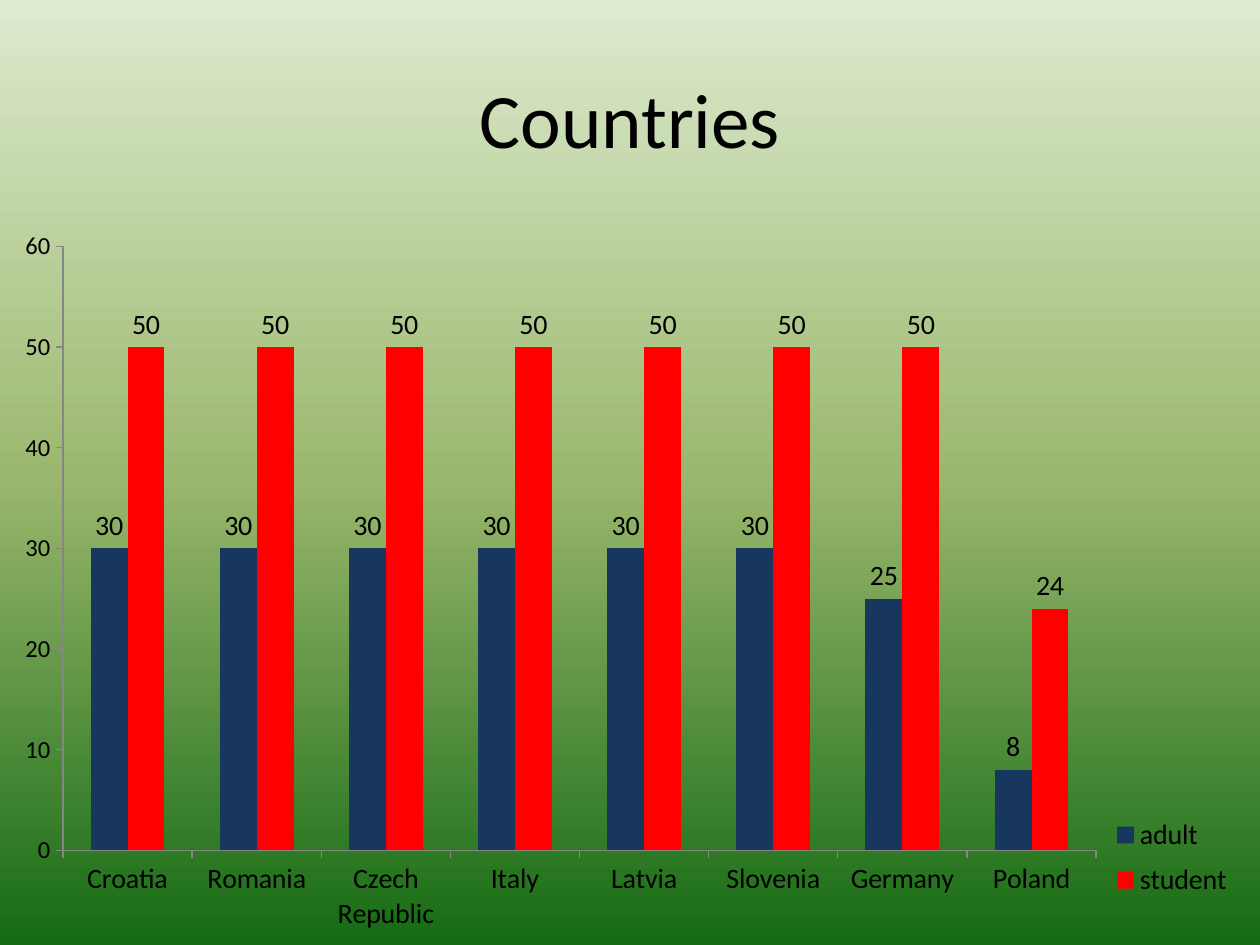
from copy import deepcopy
from typing import NamedTuple

from pptx import Presentation
from pptx.chart.data import CategoryChartData
from pptx.dml.color import RGBColor
from pptx.enum.chart import XL_CHART_TYPE, XL_LABEL_POSITION, XL_LEGEND_POSITION, XL_TICK_MARK
from pptx.enum.text import MSO_ANCHOR, PP_ALIGN
from pptx.oxml import parse_xml
from pptx.oxml.ns import nsdecls
from pptx.util import Inches, Pt

COLUMN = XL_CHART_TYPE.COLUMN_CLUSTERED
OUTER = XL_LABEL_POSITION.OUTSIDE_END
RIGHT = XL_LEGEND_POSITION.RIGHT
TICK = XL_TICK_MARK.OUTSIDE
MIDDLE = MSO_ANCHOR.MIDDLE
CENTER = PP_ALIGN.CENTER

BLACK = RGBColor(0, 0, 0)
GRAY = RGBColor(0x86, 0x86, 0x86)
NAVY = RGBColor(0x17, 0x37, 0x5E)
RED = RGBColor(0xFF, 0, 0)
PALE = RGBColor(0xDD, 0xEB, 0xCF)
OLIVE = RGBColor(0x9C, 0xB8, 0x6E)
GREEN = RGBColor(0x15, 0x6B, 0x13)

FACE = "Calibri"
WIDE, HIGH = Inches(10), Inches(7.5)
LANDS = ("Croatia", "Romania", "Czech Republic", "Italy",
         "Latvia", "Slovenia", "Germany", "Poland")


class Group(NamedTuple):
    name: str
    vals: tuple
    color: RGBColor


class Box(NamedTuple):
    """Left, top, width and height as shares of the parent."""
    x: float
    y: float
    w: float
    h: float

    def place(self) -> tuple:
        return (int(self.x * WIDE), int(self.y * HIGH),
                int(self.w * WIDE), int(self.h * HIGH))


GROUPS = (Group("adult", (30,) * 6 + (25, 8), NAVY),
          Group("student", (50,) * 7 + (24,), RED))
TITLE = Box(0.05, 0.04, 0.9, 0.17)
CHART = Box(0, 0.23, 1, 0.77)
PLOT = Box(0.05, 0.04, 0.82, 0.83)
LEGEND = Box(0.87, 0.81, 0.12, 0.14)


def apply(item, **values) -> None:
    for key, value in values.items():
        setattr(item, key, value)


def style(font, size: float) -> None:
    apply(font, name=FACE, size=Pt(size), bold=False)
    font.color.rgb = BLACK


def layout(box: Box, inner: bool = False):
    """Make a fixed chart layout; inner leaves out the axis labels."""
    target = '<c:layoutTarget val="inner"/>' if inner else ""
    modes = "".join(f'<c:{key}Mode val="edge"/>' for key in "xy")
    sides = "".join(f'<c:{key} val="{value}"/>' for key, value in box._asdict().items())
    return parse_xml(f'<c:layout {nsdecls("c")}><c:manualLayout>'
                     f'{target}{modes}{sides}</c:manualLayout></c:layout>')


def paint(slide) -> None:
    fill = slide.background.fill
    fill.gradient()
    fill.gradient_angle = 270
    stops = slide.element.xpath(".//a:gsLst")[0]
    stops.insert(1, deepcopy(stops[0]))
    for stop, spot, color in zip(fill.gradient_stops, (0, 0.5, 1), (PALE, OLIVE, GREEN)):
        stop.position = spot
        stop.color.rgb = color


def head(slide, text: str) -> None:
    frame = slide.shapes.add_textbox(*TITLE.place()).text_frame
    apply(frame, word_wrap=True, vertical_anchor=MIDDLE)
    line = frame.paragraphs[0]
    apply(line, text=text, alignment=CENTER)
    style(line.runs[0].font, 44)


def graph(slide) -> None:
    data = CategoryChartData()
    data.categories = LANDS
    for group in GROUPS:
        data.add_series(group.name, group.vals)
    chart = slide.shapes.add_chart(COLUMN, *CHART.place(), data).chart
    apply(chart, has_title=False, has_legend=True)
    style(chart.font, 10)

    plot = chart.plots[0]
    apply(plot, gap_width=150, overlap=0, vary_by_categories=False)
    for series, group in zip(plot.series, GROUPS):
        series.format.fill.solid()
        series.format.fill.fore_color.rgb = group.color
        apply(series, invert_if_negative=False)
        apply(series.data_labels, show_value=True, position=OUTER)
        style(series.data_labels.font, 16)

    for axis, size in ((chart.category_axis, 16), (chart.value_axis, 14)):
        apply(axis, has_major_gridlines=False, major_tick_mark=TICK)
        axis.format.line.color.rgb = GRAY
        style(axis.tick_labels.font, size)
    apply(chart.value_axis, minimum_scale=0, maximum_scale=60, major_unit=10)

    apply(chart.legend, position=RIGHT, include_in_layout=False)
    style(chart.legend.font, 16)
    for old in chart.element.xpath(".//c:plotArea/c:layout | .//c:legend/c:layout"):
        old.getparent().remove(old)
    chart.element.xpath(".//c:plotArea")[0].insert(0, layout(PLOT, inner=True))
    chart.element.xpath(".//c:legendPos")[0].addnext(layout(LEGEND))


def main() -> None:
    deck = Presentation()
    apply(deck, slide_width=WIDE, slide_height=HIGH)
    slide = deck.slides.add_slide(deck.slide_layouts[6])
    paint(slide)
    head(slide, "Countries")
    graph(slide)
    deck.save("out.pptx")


if __name__ == "__main__":
    main()
